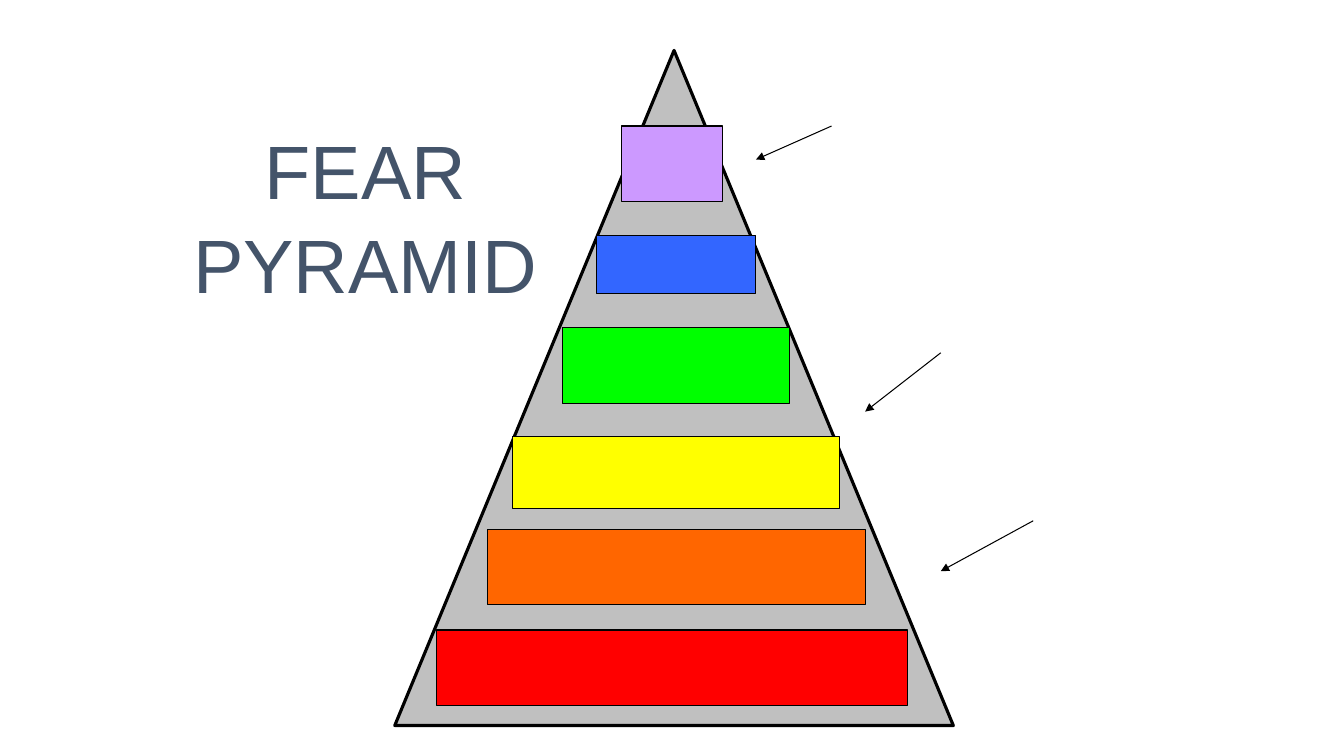
import pptx
import pptx.util
import pptx.dml.color
import pptx.enum.shapes
import pptx.enum.text
import pptx.oxml

PX = 9525  # EMU in one px, 96 px to the inch
SHAPE = pptx.enum.shapes.MSO_SHAPE
COLORS = {
    "black": "000000", "gray": "C0C0C0", "title": "44546A",
    "red": "FF0000", "orange": "FF6600", "yellow": "FFFF00",
    "green": "00FF00", "blue": "3366FF", "violet": "CC99FF",
}

prs = pptx.Presentation()
prs.slide_width, prs.slide_height = 1280 * PX, 720 * PX
s = prs.slides.add_slide(prs.slide_layouts[6])


def rgb(name):
    return pptx.dml.color.RGBColor.from_string(COLORS[name])


def add_text(text, left, top, width, height, size, color, font="Arial", spacing=1.0):
    tf = s.shapes.add_textbox(left * PX, top * PX, width * PX, height * PX).text_frame
    tf.word_wrap = True
    tf.vertical_anchor = pptx.enum.text.MSO_ANCHOR.MIDDLE
    p = tf.paragraphs[0]
    p.alignment = pptx.enum.text.PP_ALIGN.CENTER
    p.line_spacing = spacing
    r = p.add_run()
    r.text = text
    r.font.name = font
    r.font.size = pptx.util.Pt(size)
    r.font.color.rgb = rgb(color)


# Pyramid first, then its levels from the base up
blocks = [
    (SHAPE.ISOSCELES_TRIANGLE, "gray", 2.25, 376, 48, 532, 643),
    (SHAPE.RECTANGLE, "red", 0.75, 416, 600, 448, 72),
    (SHAPE.RECTANGLE, "orange", 0.75, 464, 504, 360, 72),
    (SHAPE.RECTANGLE, "yellow", 0.75, 488, 416, 312, 68),
    (SHAPE.RECTANGLE, "green", 0.75, 536, 312, 216, 72),
    (SHAPE.RECTANGLE, "blue", 0.75, 568, 224, 152, 56),
    (SHAPE.RECTANGLE, "violet", 0.75, 592, 120, 96, 72),
]
for kind, color, weight, *box in blocks:
    sp = s.shapes.add_shape(kind, *(v * PX for v in box))
    sp.shadow.inherit = False
    sp.fill.solid()
    sp.fill.fore_color.rgb = rgb(color)
    sp.line.color.rgb = rgb("black")
    sp.line.width = pptx.util.Pt(weight)

add_text("FEAR PYRAMID", 160, 112, 376, 184, size=54, color="title", spacing=1.04)

arrows = [(984, 496, 896, 544), (792, 120, 720, 152), (896, 336, 824, 392)]
for ends in arrows:
    arrow = s.shapes.add_connector(
        pptx.enum.shapes.MSO_CONNECTOR.STRAIGHT, *(v * PX for v in ends))
    arrow.line.color.rgb = rgb("black")
    arrow.line.width = pptx.util.Pt(0.75)
    ln = arrow.line._get_or_add_ln()
    ln.append(pptx.oxml.parse_xml(
        '<a:tailEnd xmlns:a="http://schemas.openxmlformats.org/drawingml/2006/main"'
        ' type="triangle"/>'))
    ln.addnext(pptx.oxml.parse_xml(
        '<a:effectLst xmlns:a="http://schemas.openxmlformats.org/drawingml/2006/main"/>'))

prs.save("out.pptx")
